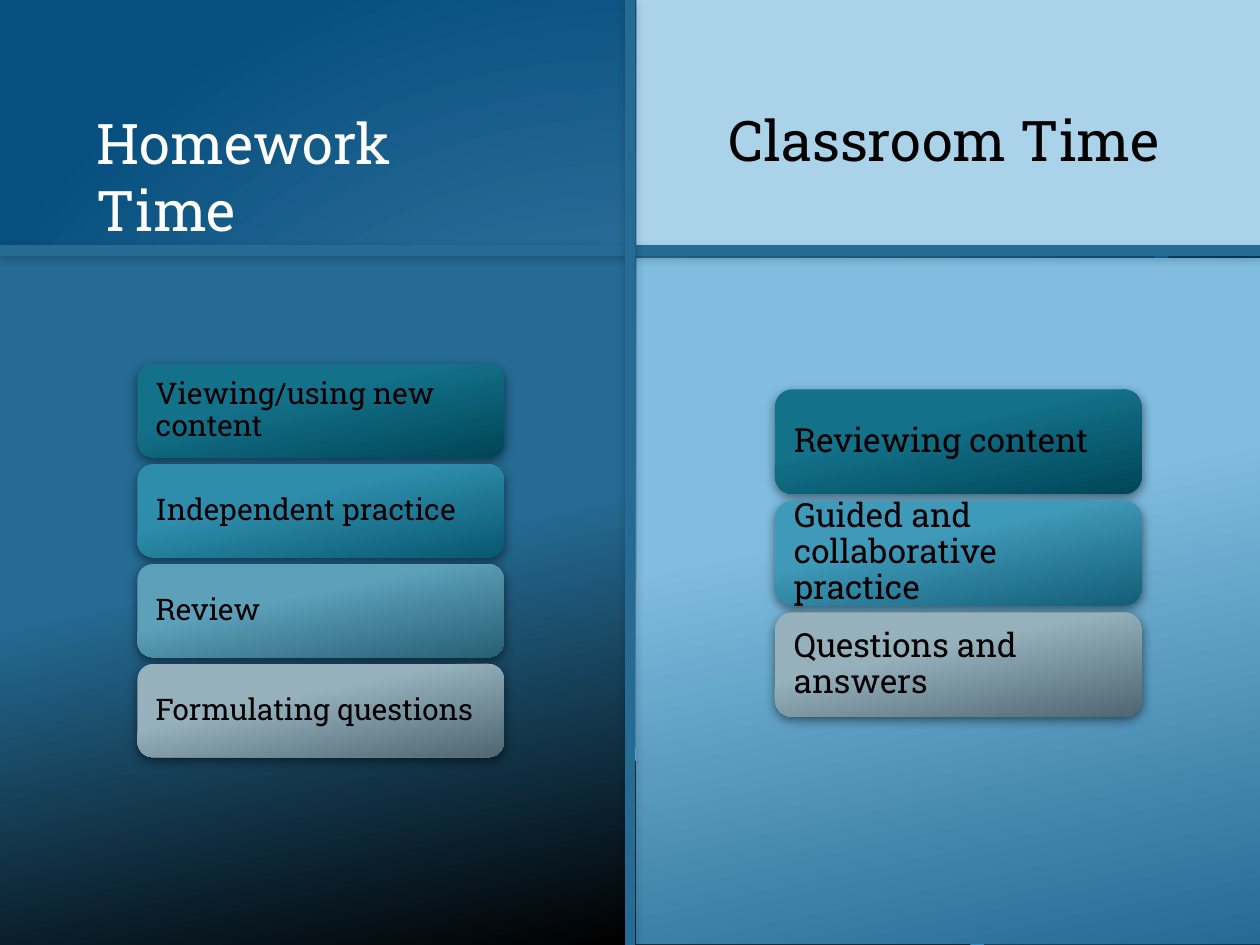
from dataclasses import dataclass

from lxml import etree
from pptx import Presentation
from pptx import util as u
from pptx.dml.color import RGBColor
from pptx.enum import shapes, text
from pptx.oxml.ns import qn

WIDTH, HEIGHT = u.Inches(10), u.Inches(7.5)
COLUMN, ROW = WIDTH / 10, HEIGHT / 7.5
FONT = "Roboto Slab"
TILT = 360 - 78  # gradients run down and slightly to the right

BLACK = RGBColor(0x00, 0x00, 0x00)
WHITE = RGBColor(0xFF, 0xFF, 0xFF)
PALE = RGBColor(0xAA, 0xD3, 0xEA)
SKY = RGBColor(0x80, 0xBD, 0xDF)
STEEL = RGBColor(0x25, 0x6B, 0x94)
GLOW = RGBColor(0x70, 0xB6, 0xE8)
DEEP = RGBColor(0x08, 0x63, 0x9E)


@dataclass(frozen=True)
class Area:
    """A place on the grid, in columns and rows."""
    left: float
    top: float
    width: float
    height: float

    def box(self) -> tuple[int, int, int, int]:
        return (round(self.left * COLUMN), round(self.top * ROW),
                round(self.width * COLUMN), round(self.height * ROW))


@dataclass(frozen=True)
class Gradient:
    start: RGBColor
    end: RGBColor
    hold: float = 0.38  # share filled by the start colour alone


@dataclass(frozen=True)
class Card:
    label: str
    gradient: Gradient


@dataclass(frozen=True)
class Stack:
    """Cards spread evenly over an area."""
    area: Area
    card_height: float
    size: float
    cards: tuple[Card, ...]


@dataclass(frozen=True)
class Facet:
    """A translucent black background piece with its corner points."""
    opacity: int
    points: tuple[tuple[float, float], ...]


TEAL = Gradient(RGBColor(0x13, 0x71, 0x89), RGBColor(0x00, 0x46, 0x58))
LAGOON = Gradient(RGBColor(0x2E, 0x8D, 0xAB), RGBColor(0x08, 0x58, 0x71))
OCEAN = Gradient(RGBColor(0x3F, 0x99, 0xB8), RGBColor(0x13, 0x5E, 0x78))
MIST = Gradient(RGBColor(0x5C, 0xA0, 0xB9), RGBColor(0x27, 0x60, 0x75))
SLATE = Gradient(RGBColor(0x96, 0xB0, 0xBC), RGBColor(0x4D, 0x66, 0x71))

FACETS = (
    Facet(20, ((0, 0), (9.71, 0), (7.94, 6.61), (7.83, 6.68), (0, 4.58))),
    Facet(70, ((0, 4.68), (7.8, 6.78), (7.87, 6.89), (7.7, 7.5), (0, 7.5))),
    Facet(50, ((8.08, 6.85), (10, 7.37), (10, 7.5), (7.81, 7.5), (7.97, 6.92))),
    Facet(35, ((9.82, 0), (10, 0), (10, 7.26), (8.1, 6.75), (8.04, 6.64))),
)
HOMEWORK = Stack(Area(1.09, 2.89, 2.91, 3.12), 0.74, 17, (
    Card("Viewing/using new content", TEAL),
    Card("Independent practice", LAGOON),
    Card("Review", MIST),
    Card("Formulating questions", SLATE),
))
CLASSROOM = Stack(Area(6.15, 3.09, 2.91, 2.6), 0.83, 19, (
    Card("Reviewing content", TEAL),
    Card("Guided and collaborative practice", OCEAN),
    Card("Questions and answers", SLATE),
))


def apply_gradient(fill, gradient: Gradient) -> None:
    fill.gradient()
    for stop, color, position in zip(fill.gradient_stops,
                                     (gradient.start, gradient.end),
                                     (gradient.hold, 1)):
        stop.color.rgb = color
        stop.position = position


def add_shadow(shape, opacity: int, blur: float, distance: float) -> None:
    properties = shape._element.spPr
    effects = etree.SubElement(properties, qn("a:effectLst"))
    shadow = etree.SubElement(effects, qn("a:outerShdw"), blurRad=str(u.Pt(blur)),
                              dist=str(u.Pt(distance)), dir="5400000",
                              algn="ctr", rotWithShape="0")
    color = etree.SubElement(shadow, qn("a:srgbClr"), val=str(BLACK))
    etree.SubElement(color, qn("a:alpha"), val=str(opacity * 1000))


def paint_background(slide) -> None:
    """Radial gradient centred below the middle of the slide."""
    fill = slide.background.fill
    apply_gradient(fill, Gradient(GLOW, DEEP, 0))
    linear = next(slide._element.iter(qn("a:lin")))
    radial = etree.Element(qn("a:path"), path="circle")
    etree.SubElement(radial, qn("a:fillToRect"),
                     l="50000", t="50000", r="50000", b="0")
    linear.getparent().replace(linear, radial)


def add_facet(slide, facet: Facet) -> None:
    points = [(round(x * COLUMN), round(y * ROW)) for x, y in facet.points]
    builder = slide.shapes.build_freeform(*points[0])
    builder.add_line_segments(points[1:], close=True)
    shape = builder.convert_to_shape()
    shape.shadow.inherit = False
    shape.line.fill.background()
    shape.fill.solid()
    shape.fill.fore_color.rgb = BLACK
    color = next(shape._element.spPr.iter(qn("a:srgbClr")))
    etree.SubElement(color, qn("a:alpha"), val=str(facet.opacity * 1000))


def add_panel(slide, area: Area, paint: RGBColor | Gradient) -> None:
    shape = slide.shapes.add_shape(shapes.MSO_SHAPE.RECTANGLE, *area.box())
    shape.shadow.inherit = False
    shape.line.fill.background()
    if isinstance(paint, Gradient):
        apply_gradient(shape.fill, paint)
        shape.fill.gradient_angle = TILT
    else:
        shape.fill.solid()
        shape.fill.fore_color.rgb = paint


def add_run(paragraph, words: str, size: float, color: RGBColor) -> None:
    run = paragraph.add_run()
    run.text = words
    run.font.name = FONT
    run.font.size = u.Pt(size)
    run.font.color.rgb = color


def add_title(slide, area: Area, words: str, color: RGBColor) -> None:
    frame = slide.shapes.add_textbox(*area.box()).text_frame
    frame.word_wrap = True
    add_run(frame.paragraphs[0], words, 32, color)


def add_stack(slide, stack: Stack) -> None:
    group = slide.shapes.add_group_shape()
    area = stack.area
    pitch = (area.height - stack.card_height) / (len(stack.cards) - 1)
    for index, card in enumerate(stack.cards):
        place = Area(area.left, area.top + index * pitch, area.width, stack.card_height)
        shape = group.shapes.add_shape(shapes.MSO_SHAPE.ROUNDED_RECTANGLE, *place.box())
        apply_gradient(shape.fill, card.gradient)
        shape.fill.gradient_angle = TILT
        shape.line.fill.background()
        add_shadow(shape, 50, 6, 2)
        frame = shape.text_frame
        frame.word_wrap = True
        frame.vertical_anchor = text.MSO_ANCHOR.MIDDLE
        frame.margin_left = frame.margin_right = u.Inches(0.11)
        frame.margin_top = frame.margin_bottom = u.Inches(0.1)
        paragraph = frame.paragraphs[0]
        paragraph.alignment = text.PP_ALIGN.LEFT
        paragraph.line_spacing = 0.9
        add_run(paragraph, card.label, stack.size, BLACK)


def add_divider(slide, area: Area) -> None:
    left, top, width, height = area.box()
    line = slide.shapes.add_connector(shapes.MSO_CONNECTOR.STRAIGHT,
                                      left, top, left + width, top + height)
    line.line.color.rgb = STEEL
    line.line.width = u.Pt(6)
    add_shadow(line, 20, 5, 1)


def main() -> None:
    presentation = Presentation()
    presentation.slide_width, presentation.slide_height = WIDTH, HEIGHT
    slide = presentation.slides.add_slide(presentation.slide_layouts[6])
    paint_background(slide)
    for facet in FACETS:
        add_facet(slide, facet)
    add_panel(slide, Area(5.05, 0, 4.95, 1.99), PALE)
    add_panel(slide, Area(0, 1.99, 4.98, 5.51), Gradient(STEEL, BLACK, 0.45))
    add_panel(slide, Area(5.05, 2.05, 4.95, 5.44), Gradient(SKY, STEEL))
    add_title(slide, Area(0.67, 0.81, 3.73, 0.64), "Homework Time", WHITE)
    add_title(slide, Area(5.68, 0.79, 3.73, 0.64), "Classroom Time", BLACK)
    add_stack(slide, HOMEWORK)
    add_divider(slide, Area(0, 1.99, 10, 0))
    add_divider(slide, Area(5, 0, 0, 7.5))
    add_stack(slide, CLASSROOM)
    presentation.save("out.pptx")


if __name__ == "__main__":
    main()
